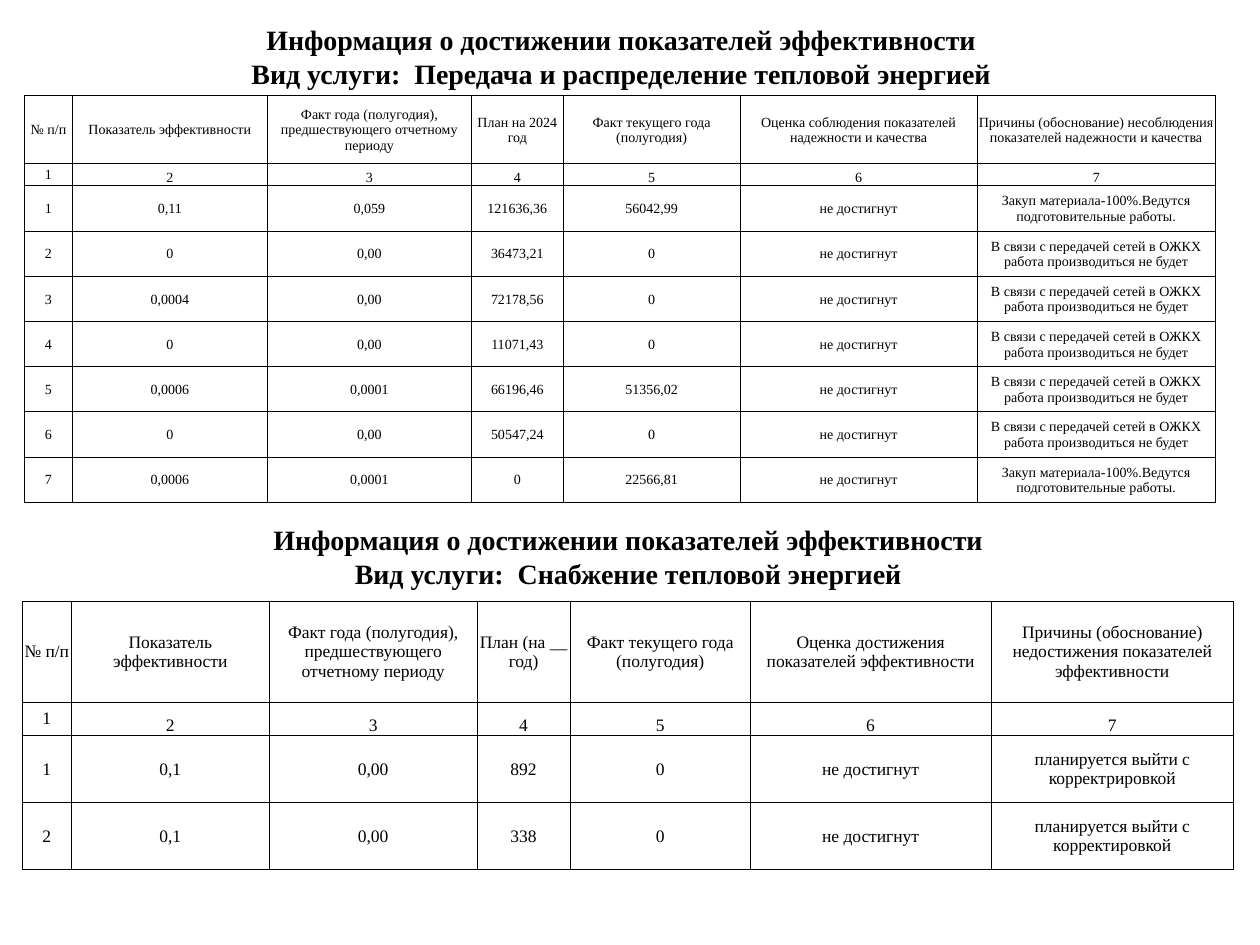
from lxml.etree import SubElement
from pptx import Presentation
from pptx.dml.color import RGBColor
from pptx.enum.text import MSO_ANCHOR as Anchor, PP_ALIGN as Align
from pptx.oxml.ns import qn
from pptx.util import Pt

BLACK = RGBColor(0x00, 0x00, 0x00)
WHITE = RGBColor(0xFF, 0xFF, 0xFF)

# Wording shared by both tables
HEADING = "Информация о достижении показателей эффективности\nВид услуги:  "
NUMBER, INDICATOR = "№ п/п", "Показатель эффективности"
PREVIOUS_FACT = "Факт года (полугодия), предшествующего отчетному периоду"
CURRENT_FACT = "Факт текущего года (полугодия)"
COLUMN_NUMBERS = [str(number) for number in range(1, 8)]
MISSED = "не достигнут"
PURCHASE = "Закуп материала-100%.Ведутся подготовительные работы."
HANDOVER = "В связи с передачей сетей в ОЖКХ работа производиться не будет"

# Column widths in points; each table scales them to its own width
COLUMN_WIDTHS = [27.4, 111.4, 116.6, 52.4, 101.1, 135.4, 136.1]


def write_text(text_frame, text, size, font="Times New Roman", color=BLACK,
               bold=False, align=Align.CENTER):
    paragraph = text_frame.paragraphs[0]
    paragraph.alignment = align
    for index, line in enumerate(text.split("\n")):
        if index:
            paragraph.add_line_break()
        run = paragraph.add_run()
        run.text = line
        run.font.name = font
        run.font.size = Pt(size)
        run.font.bold = bold
        run.font.color.rgb = color


class ReportSlide:
    heading_size = 16
    border_width = 0.5
    cell_margin = 0.5

    def __init__(self, presentation):
        self.slide = presentation.slides.add_slide(presentation.slide_layouts[6])

    def add_heading(self, text, left, top, width, height):
        shape = self.slide.shapes.add_textbox(Pt(left), Pt(top), Pt(width), Pt(height))
        shape.text_frame.word_wrap = True
        shape.text_frame.vertical_anchor = Anchor.MIDDLE
        write_text(shape.text_frame, text, self.heading_size, bold=True)

    def add_borders(self, cell):
        properties = cell._tc.get_or_add_tcPr()
        for side in ("lnL", "lnR", "lnT", "lnB"):
            line = SubElement(properties, qn(f"a:{side}"), w=str(Pt(self.border_width)))
            fill = SubElement(line, qn("a:solidFill"))
            SubElement(fill, qn("a:srgbClr"), val=str(BLACK))

    def add_table(self, rows, left, top, width, row_heights, size):
        frame = self.slide.shapes.add_table(
            len(rows), len(COLUMN_WIDTHS), Pt(left), Pt(top), Pt(width),
            Pt(sum(row_heights)))
        table = frame.table
        table.first_row = table.horz_banding = False
        scale = width / sum(COLUMN_WIDTHS)
        for column, column_width in zip(table.columns, COLUMN_WIDTHS):
            column.width = Pt(column_width * scale)
        for row_index, (values, height) in enumerate(zip(rows, row_heights)):
            table.rows[row_index].height = Pt(height)
            for column_index, text in enumerate(values):
                self.fill_cell(table.cell(row_index, column_index), text, size,
                               bottom=row_index == 1 and column_index > 0,
                               white=row_index > 1 and column_index == 0)

    def fill_cell(self, cell, text, size, bottom, white):
        cell.margin_left = cell.margin_right = cell.margin_top = Pt(self.cell_margin)
        cell.margin_bottom = 0
        cell.vertical_anchor = Anchor.BOTTOM if bottom else Anchor.MIDDLE
        self.add_borders(cell)
        if white:
            cell.fill.solid()
            cell.fill.fore_color.rgb = WHITE
        else:
            cell.fill.background()
        write_text(cell.text_frame, text, size)


def main():
    presentation = Presentation()
    presentation.slide_width, presentation.slide_height = Pt(720), Pt(540)
    report = ReportSlide(presentation)

    # Heat transmission and distribution
    report.add_heading(HEADING + "Передача и распределение тепловой энергией",
                       31, 9.4, 648, 45.4)
    transmission = [
        [NUMBER, INDICATOR, PREVIOUS_FACT, "План на 2024 год", CURRENT_FACT,
         "Оценка соблюдения показателей надежности и качества",
         "Причины (обоснование) несоблюдения показателей надежности и качества"],
        COLUMN_NUMBERS,
        ["1", "0,11", "0,059", "121636,36", "56042,99", MISSED, PURCHASE],
        ["2", "0", "0,00", "36473,21", "0", MISSED, HANDOVER],
        ["3", "0,0004", "0,00", "72178,56", "0", MISSED, HANDOVER],
        ["4", "0", "0,00", "11071,43", "0", MISSED, HANDOVER],
        ["5", "0,0006", "0,0001", "66196,46", "51356,02", MISSED, HANDOVER],
        ["6", "0", "0,00", "50547,24", "0", MISSED, HANDOVER],
        ["7", "0,0006", "0,0001", "0", "22566,81", MISSED, PURCHASE],
    ]
    report.add_table(transmission, 14, 54.6, 680.6, [38.9, 12.7] + [25.85] * 7, size=8)

    # Heat supply
    report.add_heading(HEADING + "Снабжение тепловой энергией", 35, 292.5, 648, 51)
    supply = [
        [NUMBER, INDICATOR, PREVIOUS_FACT, "План (на __ год)", CURRENT_FACT,
         "Оценка достижения показателей эффективности",
         "Причины (обоснование) недостижения показателей эффективности"],
        COLUMN_NUMBERS,
        ["1", "0,1", "0,00", "892", "0", MISSED, "планируется выйти с корректрировкой"],
        ["2", "0,1", "0,00", "338", "0", MISSED, "планируется выйти с корректировкой"],
    ]
    report.add_table(supply, 12.8, 343.5, 692, [57.6, 19.1, 38.3, 38.3], size=10)

    presentation.save("out.pptx")


if __name__ == "__main__":
    main()
